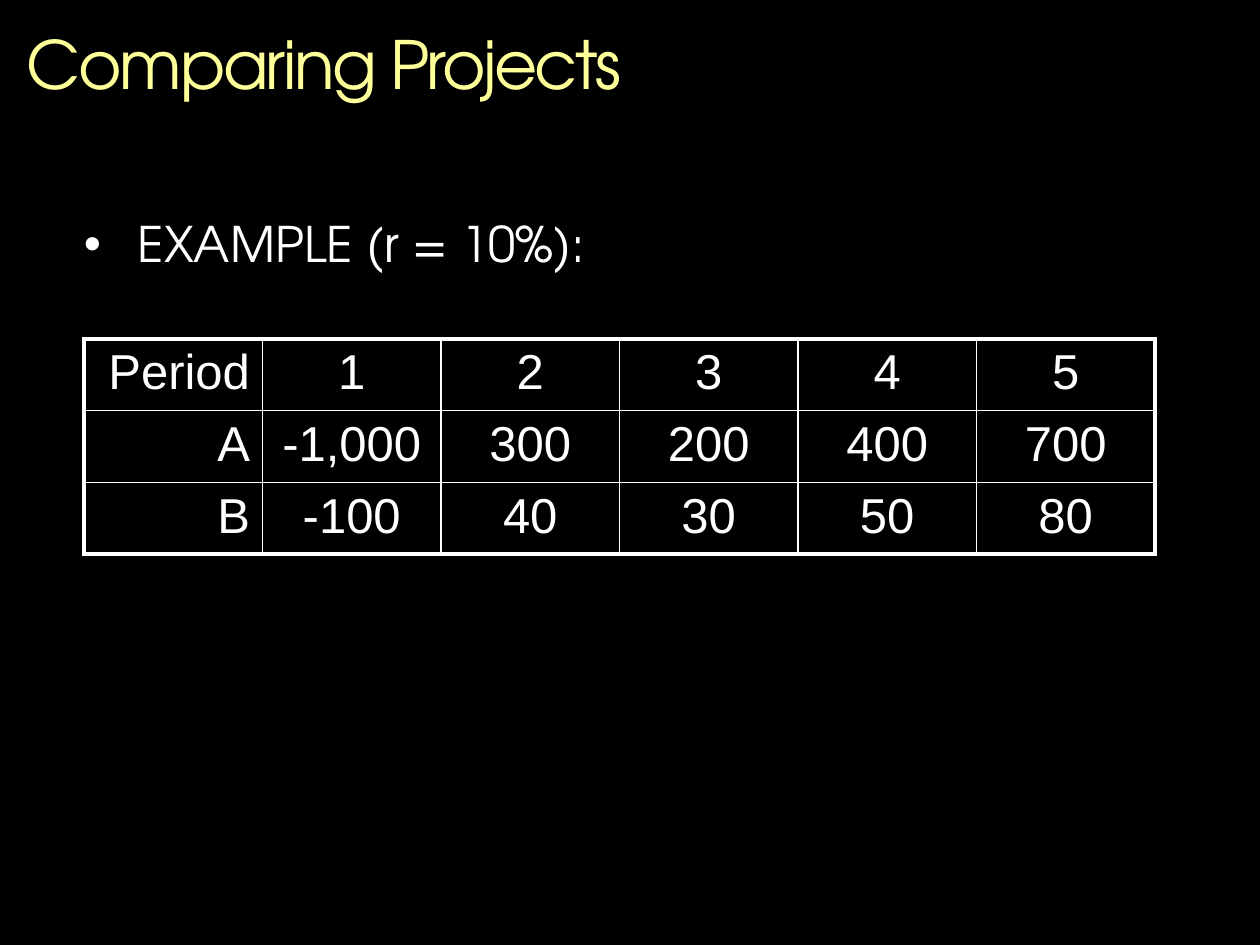
from lxml.etree import SubElement
from pptx import Presentation
from pptx.dml.color import RGBColor
from pptx.enum.text import PP_ALIGN
from pptx.oxml import parse_xml
from pptx.oxml.ns import nsdecls, qn
from pptx.util import Emu, Pt

TITLE = "Comparing Projects"
EXAMPLE = "EXAMPLE (r = 10%):"
CASH_FLOWS = [
    ("Period", "1", "2", "3", "4", "5"),
    ("A", "-1,000", "300", "200", "400", "700"),
    ("B", "-100", "40", "30", "50", "80"),
]
ROW_HEIGHTS = (68, 72, 68)
COLUMN_WIDTH = 178.5

BLACK, WHITE, YELLOW = "000000", "FFFFFF", "FFFF99"
HEADING_FONT, TABLE_FONT = "TeX Gyre Adventor", "Arial"
OUTER_BORDER, INNER_BORDER = 2.25, 1


def px(length):
    return Emu(round(length * 914400 / 126))


def color(hex_value):
    return RGBColor.from_string(hex_value)


def write(paragraph, text, font_name, size, hex_value):
    run = paragraph.add_run()
    run.text = text
    run.font.color.rgb = color(hex_value)
    for name, value in {"name": font_name, "size": Pt(size)}.items():
        setattr(run.font, name, value)
    return run


def add_text_line(slide, box):
    """Add a text box without margins and return its first paragraph."""
    frame = slide.shapes.add_textbox(*map(px, box)).text_frame
    frame.word_wrap = True
    for side in ("left", "top", "right", "bottom"):
        setattr(frame, f"margin_{side}", 0)
    paragraph = frame.paragraphs[0]
    paragraph.line_spacing = 0.9
    return paragraph


def add_bullet(paragraph, indent):
    properties = paragraph._p.get_or_add_pPr()
    properties.set("marL", str(px(indent)))
    properties.set("indent", str(-px(indent)))
    SubElement(properties, qn("a:buFont")).set("typeface", "Arial")
    SubElement(properties, qn("a:buChar")).set("char", "•")


def set_borders(cell, widths):
    """Draw white borders; widths are points for left, right, top, bottom."""
    properties = cell._tc.get_or_add_tcPr()
    for position, (side, width) in enumerate(zip("LRTB", widths)):
        properties.insert(position, parse_xml(
            f'<a:ln{side} {nsdecls("a")} w="{Pt(width)}"><a:solidFill>'
            f'<a:srgbClr val="{WHITE}"/></a:solidFill></a:ln{side}>'))


def add_cash_flow_table(slide, left, top):
    row_count, column_count = len(CASH_FLOWS), len(CASH_FLOWS[0])
    table = slide.shapes.add_table(
        row_count, column_count, px(left), px(top),
        px(COLUMN_WIDTH * column_count), px(sum(ROW_HEIGHTS))).table
    table.first_row = table.horz_banding = False
    for column in table.columns:
        column.width = px(COLUMN_WIDTH)
    for r, (values, height) in enumerate(zip(CASH_FLOWS, ROW_HEIGHTS)):
        table.rows[r].height = px(height)
        for c, value in enumerate(values):
            cell = table.cell(r, c)
            cell.fill.background()
            on_edge = (c == 0, c == column_count - 1, r == 0, r == row_count - 1)
            set_borders(cell, [OUTER_BORDER if edge else INNER_BORDER for edge in on_edge])
            paragraph = cell.text_frame.paragraphs[0]
            paragraph.alignment = PP_ALIGN.RIGHT if c == 0 else PP_ALIGN.CENTER
            write(paragraph, value, TABLE_FONT, 28, WHITE)


def main():
    presentation = Presentation()
    presentation.slide_width, presentation.slide_height = px(1260), px(945)
    slide = presentation.slides.add_slide(presentation.slide_layouts[6])
    slide.background.fill.solid()
    slide.background.fill.fore_color.rgb = color(BLACK)

    title = add_text_line(slide, (27, 32, 1105, 126))
    title_run = write(title, TITLE, HEADING_FONT, 38, YELLOW)
    title_run.font._element.set("spc", "-150")

    example = add_text_line(slide, (84, 220, 1081, 609))
    add_bullet(example, 54)
    write(example, EXAMPLE, HEADING_FONT, 28, WHITE)

    add_cash_flow_table(slide, 84, 339)
    presentation.save("out.pptx")


if __name__ == "__main__":
    main()
